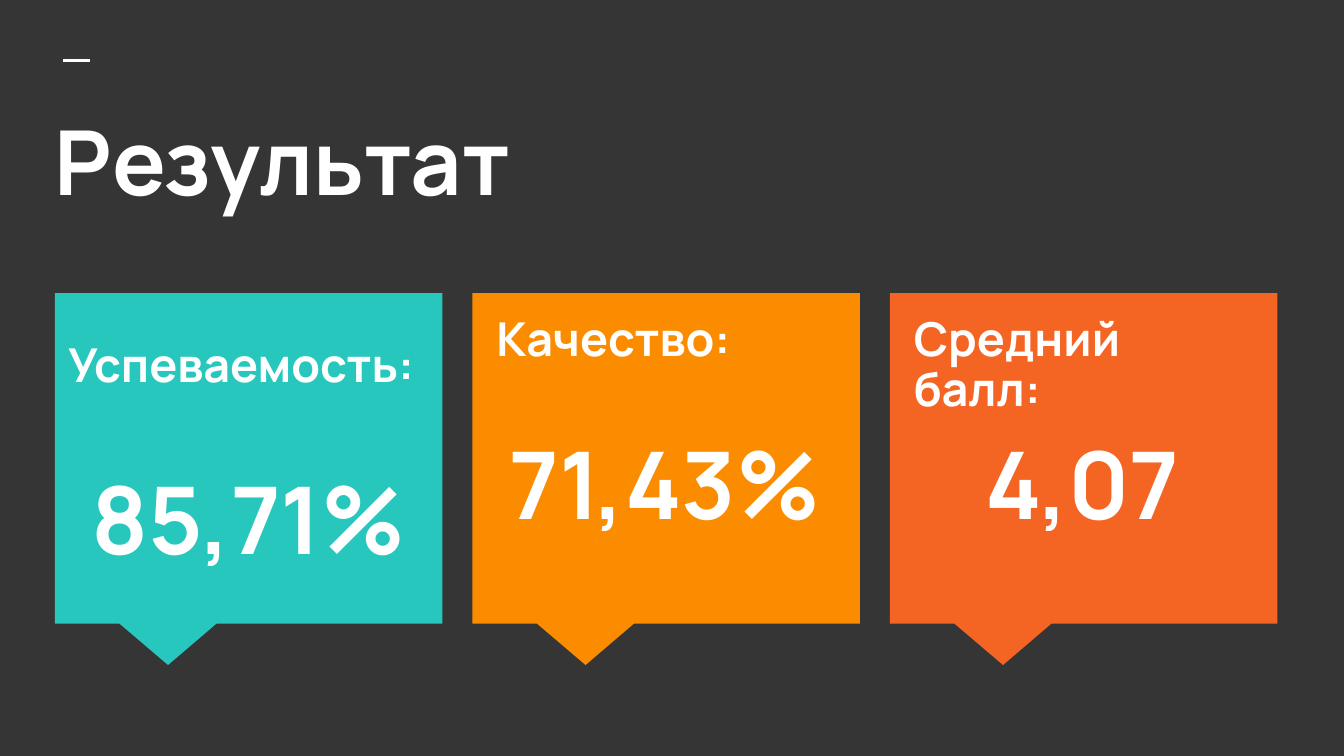
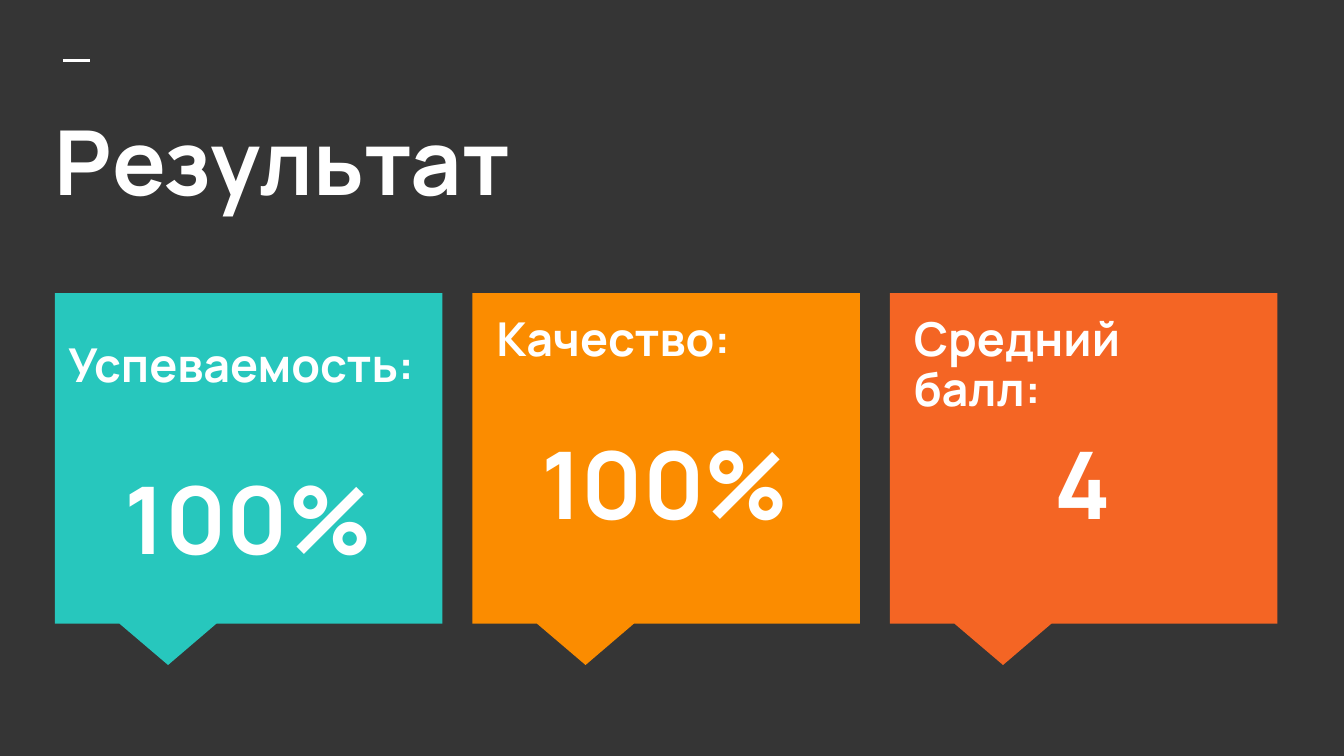
from dataclasses import dataclass

from lxml.etree import SubElement
from pptx import Presentation
from pptx.dml.color import RGBColor
from pptx.enum.shapes import MSO_CONNECTOR as Connector
from pptx.enum.shapes import MSO_SHAPE as Shape
from pptx.enum.text import MSO_ANCHOR as Anchor
from pptx.enum.text import PP_ALIGN as Align
from pptx.oxml.ns import qn
from pptx.util import Cm, Pt

COLORS = {
    "background": "353535",
    "text": "FFFFFF",
    "teal": "27C7BD",
    "orange": "FB8C00",
    "coral": "F46524",
}
FONT = "Manrope"
INSET = Cm(0.25)

# Callout grid, in centimetres
CARD_LEFT, CARD_TOP = 1.04, 5.54
CARD_WIDTH, CARD_HEIGHT = 7.32, 6.25
CARD_PITCH = 7.89


@dataclass(frozen=True)
class Metric:
    label: str
    color: str
    gap: float  # points between label and value
    inside: bool = False  # text sits in the callout itself


METRICS = (
    Metric("Успеваемость:", "teal", 43.7, inside=True),
    Metric("Качество:", "orange", 38.8),
    Metric("Средний балл:", "coral", 12),
)

RESULTS = (
    ("85,71%", "71,43%", "4,07"),
    ("100%", "100%", "4"),
)


def rgb(name: str) -> RGBColor:
    return RGBColor.from_string(COLORS[name])


def prepare_frame(frame, anchor=Anchor.TOP) -> None:
    frame.word_wrap = True
    frame.vertical_anchor = anchor
    frame.margin_left = frame.margin_right = INSET
    frame.margin_top = frame.margin_bottom = INSET


def write(paragraph, text: str, size: float, align=Align.LEFT) -> None:
    paragraph.text = text
    paragraph.alignment = align
    paragraph.line_spacing = 0.9
    for run in paragraph.runs:
        run.font.name = FONT
        run.font.size = Pt(size)
        run.font.bold = True
        run.font.color.rgb = rgb("text")


def add_text_area(slide, left: float, top: float, width: float, height: float):
    area = slide.shapes.add_textbox(Cm(left), Cm(top), Cm(width), Cm(height))
    prepare_frame(area.text_frame)
    return area.text_frame


def add_heading(slide, text: str) -> None:
    # Short dash above the title
    dash = slide.shapes.add_connector(
        Connector.STRAIGHT, Cm(1.19), Cm(1.14), Cm(1.7), Cm(1.14))
    dash.line.color.rgb = rgb("text")
    dash.line.width = Pt(1.5)
    SubElement(dash._element.spPr, qn("a:effectLst"))

    title = add_text_area(slide, 0.79, 1.98, 23.95, 2.84)
    write(title.paragraphs[0], text, 48)


def add_callout(slide, left: float, color: str):
    callout = slide.shapes.add_shape(
        Shape.RECTANGULAR_CALLOUT,
        Cm(left), Cm(CARD_TOP), Cm(CARD_WIDTH), Cm(CARD_HEIGHT))
    callout.adjustments[0] = -0.208
    callout.adjustments[1] = 0.625
    callout.shadow.inherit = False
    callout.fill.solid()
    callout.fill.fore_color.rgb = rgb(color)
    callout.line.fill.background()
    return callout


def add_metric(slide, column: int, metric: Metric, result: str) -> None:
    left = CARD_LEFT + column * CARD_PITCH
    callout = add_callout(slide, left, metric.color)
    if metric.inside:
        frame = callout.text_frame
        prepare_frame(frame, Anchor.MIDDLE)
    else:
        frame = add_text_area(slide, left + 0.2, CARD_TOP + 0.18, 6.88, 5.56)

    write(frame.paragraphs[0], metric.label, 25)
    value = frame.add_paragraph()
    write(value, result, 50, Align.CENTER)
    value.space_before = Pt(metric.gap)
    value.space_after = Pt(12)


def add_result_slide(deck, results: tuple[str, ...]) -> None:
    slide = deck.slides.add_slide(deck.slide_layouts[6])
    slide.background.fill.solid()
    slide.background.fill.fore_color.rgb = rgb("background")
    add_heading(slide, "Результат")
    for column, (metric, result) in enumerate(zip(METRICS, results)):
        add_metric(slide, column, metric, result)


def main() -> None:
    deck = Presentation()
    deck.slide_width, deck.slide_height = Cm(25.4), Cm(14.29)
    for results in RESULTS:
        add_result_slide(deck, results)
    deck.save("out.pptx")


if __name__ == "__main__":
    main()
